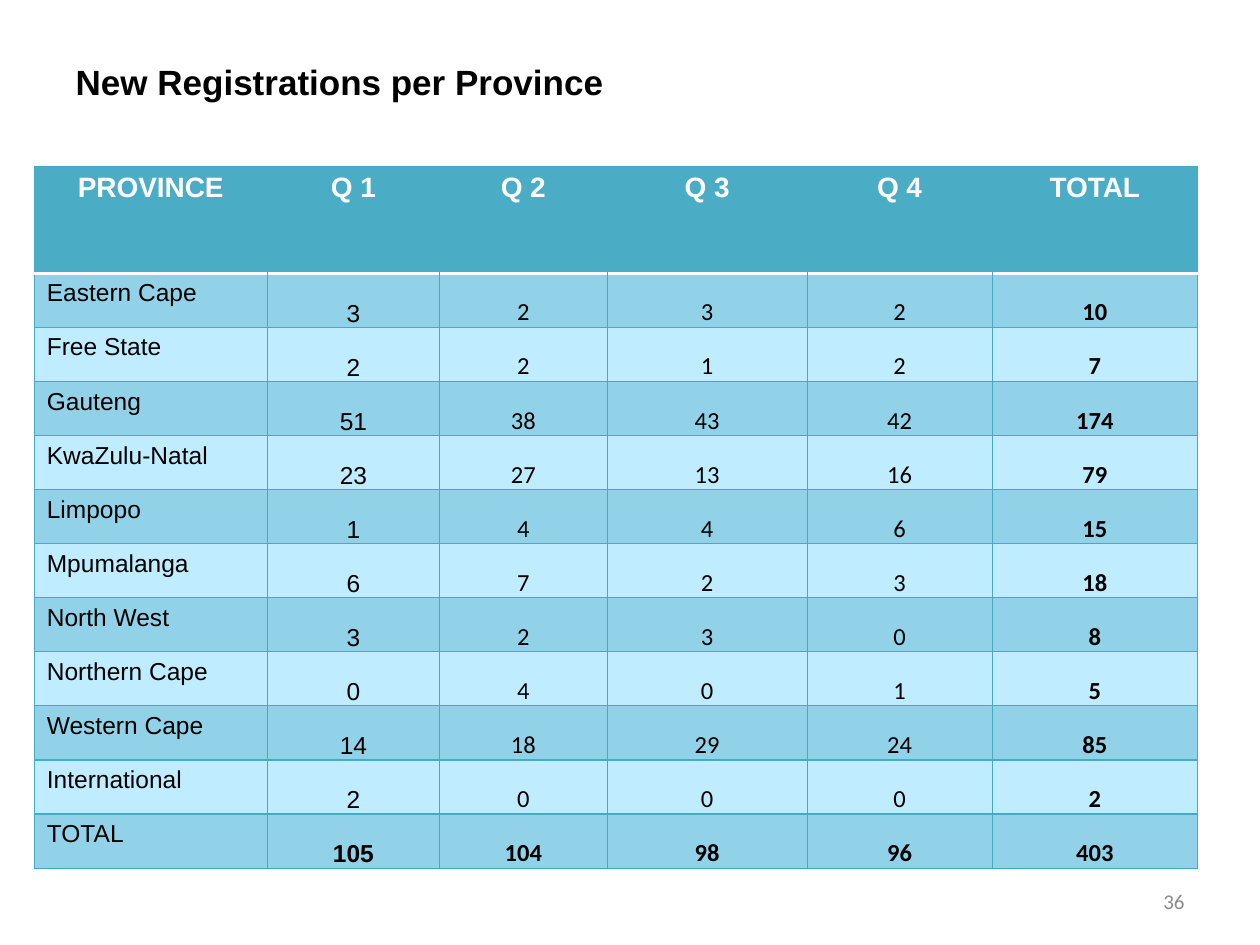
from lxml.etree import SubElement
from pptx import Presentation
from pptx.dml.color import RGBColor
from pptx.enum.text import MSO_ANCHOR, PP_ALIGN
from pptx.oxml.ns import qn
from pptx.util import Cm, Pt

TITLE = "New Registrations per Province"
PAGE_NUMBER = "36"
HEADINGS = ["PROVINCE", "Q 1", "Q 2", "Q 3", "Q 4", "TOTAL"]
REGISTRATIONS = [
    ("Eastern Cape", 3, 2, 3, 2, 10),
    ("Free State", 2, 2, 1, 2, 7),
    ("Gauteng", 51, 38, 43, 42, 174),
    ("KwaZulu-Natal", 23, 27, 13, 16, 79),
    ("Limpopo", 1, 4, 4, 6, 15),
    ("Mpumalanga", 6, 7, 2, 3, 18),
    ("North West", 3, 2, 3, 0, 8),
    ("Northern Cape", 0, 4, 0, 1, 5),
    ("Western Cape", 14, 18, 29, 24, 85),
    ("International", 2, 0, 0, 0, 2),
    ("TOTAL", 105, 104, 98, 96, 403),
]
COLUMN_WIDTHS = [4.7, 3.47, 3.38, 4.03, 3.73, 4.14]
HEADER_HEIGHT, ROW_HEIGHT = 2.16, 1.09
HEADER_FILL, DARK_ROW, LIGHT_ROW = "4BACC6", "91D2E8", "C0ECFF"
GRID = ("46AAC5", 0.75)
HEADER_RULE = ("FFFFFF", 2)
NO_STYLE = "{2D5ABB26-0587-4C30-8999-92F81FD0307C}"


def color(value):
    return RGBColor.from_string(value)


def write(frame, text, size, font, text_color, bold=False, align=PP_ALIGN.LEFT):
    paragraph = frame.paragraphs[0]
    paragraph.alignment = align
    run = paragraph.add_run()
    run.text = text
    run.font.size = Pt(size)
    run.font.name = font
    run.font.bold = bold
    run.font.color.rgb = color(text_color)


def set_borders(cell, borders):
    properties = cell._tc.get_or_add_tcPr()
    for side in "LRTB":
        if side in borders:
            line_color, width = borders[side]
            line = SubElement(properties, qn(f"a:ln{side}"), w=str(Pt(width)))
            fill = SubElement(line, qn("a:solidFill"))
            SubElement(fill, qn("a:srgbClr"), val=line_color)


def fill_cell(cell, fill_color):
    cell.fill.solid()
    cell.fill.fore_color.rgb = color(fill_color)


def add_header(table):
    last = len(HEADINGS) - 1
    for column, heading in enumerate(HEADINGS):
        cell = table.cell(0, column)
        borders = {"T": GRID, "B": HEADER_RULE}
        if column == 0:
            borders["L"] = GRID
        if column == last:
            borders["R"] = GRID
        set_borders(cell, borders)
        fill_cell(cell, HEADER_FILL)
        write(cell.text_frame, heading, 16, "Arial", "FFFFFF", True, PP_ALIGN.CENTER)


def add_rows(table):
    last_row, last_column = len(REGISTRATIONS), len(HEADINGS) - 1
    for row, values in enumerate(REGISTRATIONS, start=1):
        for column, value in enumerate(values):
            cell = table.cell(row, column)
            top = HEADER_RULE if row == 1 else GRID
            set_borders(cell, {"L": GRID, "R": GRID, "T": top, "B": GRID})
            fill_cell(cell, DARK_ROW if row % 2 else LIGHT_ROW)
            if column == 0:
                write(cell.text_frame, value, 14, "Arial", "000000")
                continue
            cell.vertical_anchor = MSO_ANCHOR.BOTTOM
            cell.margin_left = cell.margin_right = 0
            cell.margin_top = cell.margin_bottom = 0
            font = "Arial" if column == 1 else "Calibri"
            bold = row == last_row or column == last_column
            write(cell.text_frame, str(value), 14, font, "000000", bold, PP_ALIGN.CENTER)


def add_registrations_table(slide):
    height = HEADER_HEIGHT + ROW_HEIGHT * len(REGISTRATIONS)
    frame = slide.shapes.add_table(
        len(REGISTRATIONS) + 1, len(HEADINGS),
        Cm(0.69), Cm(3.35), Cm(sum(COLUMN_WIDTHS)), Cm(height))
    table = frame.table
    table.horz_banding = False
    table._tbl.tblPr.find(qn("a:tableStyleId")).text = NO_STYLE
    for column, width in zip(table.columns, COLUMN_WIDTHS):
        column.width = Cm(width)
    for index, row in enumerate(table.rows):
        row.height = Cm(ROW_HEIGHT if index else HEADER_HEIGHT)
    add_header(table)
    add_rows(table)


def main():
    presentation = Presentation()
    presentation.slide_width, presentation.slide_height = Cm(25.4), Cm(19.05)
    slide = presentation.slides.add_slide(presentation.slide_layouts[5])

    title = slide.shapes.title
    title.left, title.top, title.width, title.height = Cm(1.27), Cm(0.76), Cm(22.86), Cm(1.78)
    title.text_frame.vertical_anchor = MSO_ANCHOR.MIDDLE
    write(title.text_frame, TITLE, 20, "Arial", "000000", True)

    add_registrations_table(slide)

    number = slide.shapes.add_textbox(Cm(18.21), Cm(17.65), Cm(5.92), Cm(1.02))
    number.text_frame.word_wrap = True
    number.text_frame.vertical_anchor = MSO_ANCHOR.MIDDLE
    write(number.text_frame, PAGE_NUMBER, 12, "Calibri", "8C8C8C", align=PP_ALIGN.RIGHT)

    presentation.save("out.pptx")


if __name__ == "__main__":
    main()
